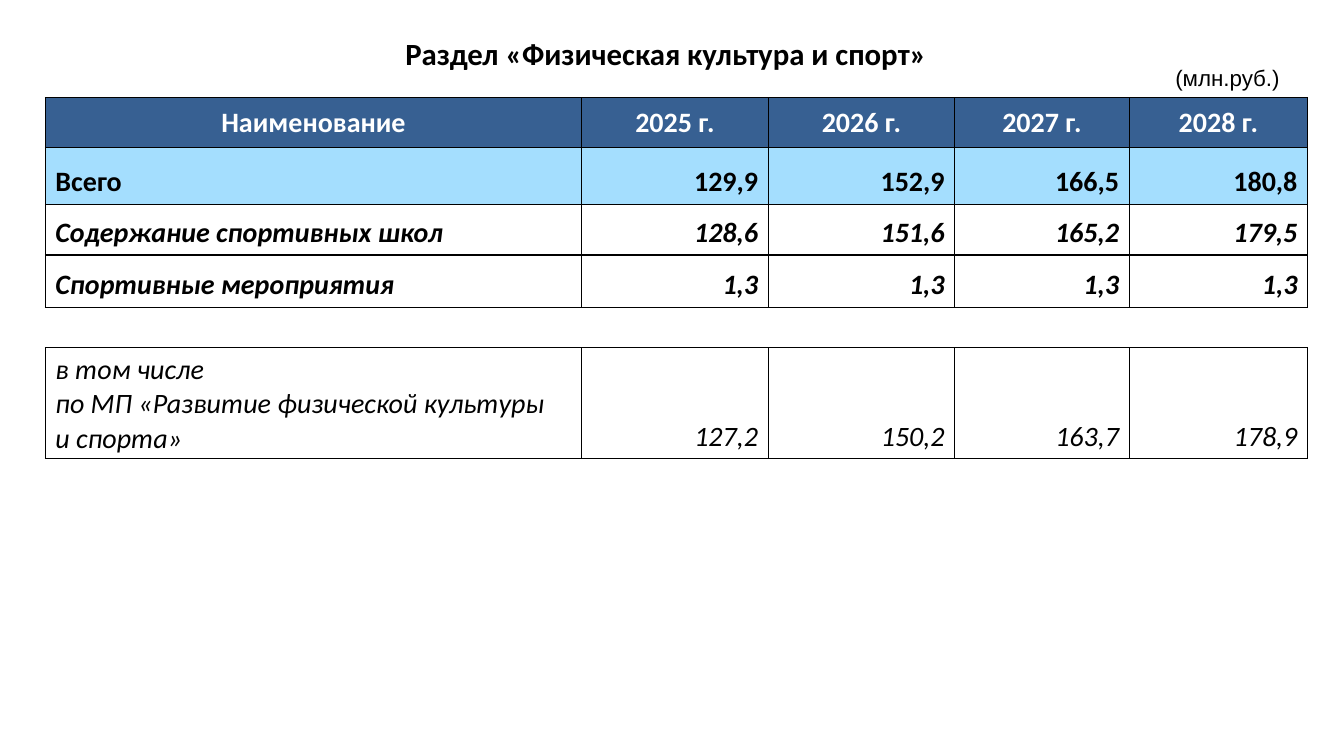
"""Build a slide with the budget table for physical culture and sport."""
from lxml import etree
from pptx import Presentation
from pptx.dml.color import RGBColor
from pptx.enum.text import MSO_ANCHOR, PP_ALIGN
from pptx.oxml.ns import qn
from pptx.util import Inches, Pt

LEFT, CENTER, RIGHT = PP_ALIGN.LEFT, PP_ALIGN.CENTER, PP_ALIGN.RIGHT
MIDDLE, BOTTOM = MSO_ANCHOR.MIDDLE, MSO_ANCHOR.BOTTOM
BLACK = RGBColor(0x00, 0x00, 0x00)
WHITE = RGBColor(0xFF, 0xFF, 0xFF)
HEADER_BLUE = RGBColor(0x37, 0x60, 0x92)
TOTAL_BLUE = RGBColor(0x83, 0xD3, 0xFE)
TOTAL_ALPHA = "73000"

COLUMN_WIDTHS = [5.32, 1.85, 1.85, 1.73, 1.77]
ROW_HEIGHTS = [0.49, 0.57, 0.5, 0.52, 0.4, 1.1]
HEADER, TOTAL, SPACER, PROGRAM = 0, 1, 4, 5
ROWS = [
    ["Наименование", "2025 г.", "2026 г.", "2027 г.", "2028 г."],
    ["Всего", "129,9", "152,9", "166,5", "180,8"],
    ["Содержание спортивных школ", "128,6", "151,6", "165,2", "179,5"],
    ["Спортивные мероприятия", "1,3", "1,3", "1,3", "1,3"],
    [""] * 5,
    ["в том числе\nпо МП «Развитие физической культуры\nи спорта»",
     "127,2", "150,2", "163,7", "178,9"],
]


def write(frame, text, size, font, color, align, bold=False, italic=False):
    frame.text = text
    for para in frame.paragraphs:
        para.alignment = align
        for span in para.runs:
            span.font.size = Pt(size)
            span.font.name = font
            span.font.color.rgb = color
            span.font.bold = bold
            span.font.italic = italic


def draw_borders(cell, visible_sides):
    properties = cell._tc.get_or_add_tcPr()
    for side in ("L", "R", "T", "B"):
        line = etree.SubElement(properties, qn(f"a:ln{side}"), w=str(Pt(1)))
        if side in visible_sides:
            fill = etree.SubElement(line, qn("a:solidFill"))
            etree.SubElement(fill, qn("a:srgbClr"), val=str(BLACK))
        else:
            etree.SubElement(line, qn("a:noFill"))


deck = Presentation()
deck.slide_width = Inches(13.33)
deck.slide_height = Inches(7.5)
page = deck.slides.add_slide(deck.slide_layouts[6])

title = page.shapes.add_textbox(Inches(1.31), Inches(0.2), Inches(10.59), Inches(0.56))
title.text_frame.word_wrap = True
title.text_frame.margin_top = Inches(0.14)
write(title.text_frame, "Раздел «Физическая культура и спорт»", 22, "Calibri", BLACK, CENTER, bold=True)

units = page.shapes.add_textbox(Inches(11.26), Inches(0.59), Inches(1.83), Inches(0.37))
units.text_frame.word_wrap = True
write(units.text_frame, "(млн.руб.)", 16, "Arial", BLACK, CENTER)

table = page.shapes.add_table(
    len(ROWS), len(COLUMN_WIDTHS), Inches(0.45), Inches(0.97),
    Inches(sum(COLUMN_WIDTHS)), Inches(sum(ROW_HEIGHTS))).table
table.first_row = False
table.horz_banding = False
for column, width in zip(table.columns, COLUMN_WIDTHS):
    column.width = Inches(width)
for row, height in zip(table.rows, ROW_HEIGHTS):
    row.height = Inches(height)

for row_index, texts in enumerate(ROWS):
    is_header = row_index == HEADER
    for column_index, text in enumerate(texts):
        cell = table.cell(row_index, column_index)
        draw_borders(cell, "TB" if row_index == SPACER else "LRTB")
        cell.vertical_anchor = MIDDLE if is_header else BOTTOM
        cell.margin_left = cell.margin_right = Inches(0.1)
        cell.margin_top = cell.margin_bottom = Inches(0.05)
        if is_header:
            align = CENTER
        else:
            align = RIGHT if column_index else LEFT
        write(cell.text_frame, text, 20, "Calibri", WHITE if is_header else BLACK, align,
              bold=row_index < PROGRAM, italic=row_index > TOTAL)
        if row_index > TOTAL:
            cell.fill.background()
            continue
        cell.fill.solid()
        cell.fill.fore_color.rgb = HEADER_BLUE if is_header else TOTAL_BLUE
        if row_index == TOTAL:
            color = cell._tc.tcPr.find(qn("a:solidFill")).find(qn("a:srgbClr"))
            etree.SubElement(color, qn("a:alpha"), val=TOTAL_ALPHA)

deck.save("out.pptx")
